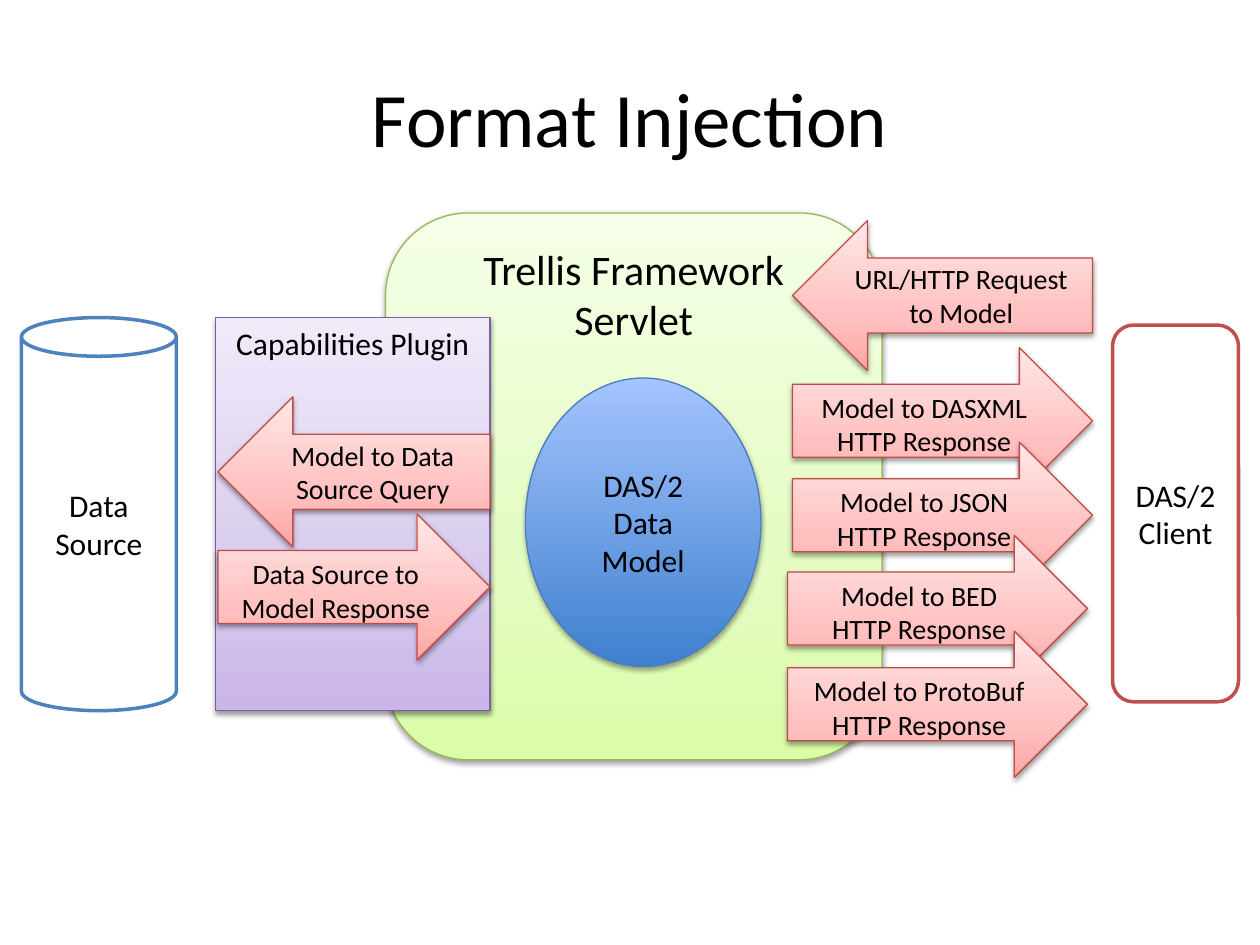
import lxml.etree
import pptx
import pptx.dml.color
import pptx.enum.shapes
import pptx.enum.text
import pptx.oxml.ns
import pptx.util

Inches = pptx.util.Inches
Pt = pptx.util.Pt
qn = pptx.oxml.ns.qn
MSO = pptx.enum.shapes.MSO_SHAPE
ANCHOR = pptx.enum.text.MSO_ANCHOR
CENTER = pptx.enum.text.PP_ALIGN.CENTER

# Gradient stops run from bottom to top: (percent, colour)
GREEN = [(0, "DAFDA7"), (35, "E4FCC2"), (100, "F5FFE7")]
PURPLE = [(0, "C9B5E8"), (35, "D8CBEE"), (100, "F0EAF9")]
BLUE = [(0, "3F80CE"), (100, "A4C4FF")]
RED = [(0, "FFA6A5"), (35, "FFC0BF"), (100, "FFE7E7")]


def rgb(value):
    return pptx.dml.color.RGBColor.from_string(value)


def sub(parent, tag, **attrs):
    return lxml.etree.SubElement(parent, qn(tag), attrs)


class Diagram:
    font = "Calibri"
    ink = "000000"

    def __init__(self, slide):
        self.s = slide

    def add_text(self, sp, lines, size, anchor):
        tf = sp.text_frame
        tf.word_wrap = True
        tf.vertical_anchor = anchor
        for i, line in enumerate(lines):
            p = tf.paragraphs[0] if i == 0 else tf.add_paragraph()
            p.alignment = CENTER
            r = p.add_run()
            r.text = line
            r.font.name = self.font
            r.font.size = Pt(size)
            r.font.color.rgb = rgb(self.ink)

    def title(self, text):
        sp = self.s.shapes.title
        sp.left, sp.top, sp.width, sp.height = map(Inches, (0.5, 0.3, 9, 1.25))
        self.add_text(sp, [text], 44, ANCHOR.MIDDLE)

    def shape(self, kind, box, lines, size, line, width, anchor):
        sp = self.s.shapes.add_shape(kind, *map(Inches, box))
        sp.shadow.inherit = False
        sp.line.color.rgb = rgb(line)
        sp.line.width = Pt(width)
        self.add_text(sp, lines, size, anchor)
        return sp

    def outlined(self, kind, box, text, line):
        sp = self.shape(kind, box, [text], 18, line, 2, ANCHOR.MIDDLE)
        sp.fill.solid()
        sp.fill.fore_color.rgb = rgb("FFFFFF")

    def shaded(self, kind, box, lines, size, stops, line,
               anchor=ANCHOR.TOP, shadow=(1.6, 38)):
        """Add a shape with a vertical gradient and a (distance, opacity) shadow."""
        sp = self.shape(kind, box, lines, size, line, 0.75, anchor)
        sp.fill.gradient()
        sp.fill.gradient_angle = 90
        props = sp.element.spPr
        stop_list = props.find(".//" + qn("a:gsLst"))
        for old in list(stop_list):
            stop_list.remove(old)
        for percent, colour in stops:
            stop = sub(stop_list, "a:gs", pos=str(percent * 1000))
            sub(stop, "a:srgbClr", val=colour)
        distance, opacity = shadow
        outer = sub(props.find(qn("a:effectLst")), "a:outerShdw",
                    blurRad=str(Pt(3.1)), dist=str(Pt(distance)),
                    dir="5400000", rotWithShape="0")
        black = sub(outer, "a:srgbClr", val="000000")
        sub(black, "a:alpha", val=str(opacity * 1000))

    def request(self, box, lines):
        self.shaded(MSO.LEFT_ARROW, box, lines, 16, RED, "BF4C48", ANCHOR.MIDDLE)

    def response(self, box, lines):
        self.shaded(MSO.RIGHT_ARROW, box, lines, 16, RED, "BF4C48")


def main():
    prs = pptx.Presentation()
    prs.slide_width, prs.slide_height = Inches(10), Inches(7.5)
    d = Diagram(prs.slides.add_slide(prs.slide_layouts[5]))
    d.title("Format Injection")

    d.shaded(MSO.FLOWCHART_ALTERNATE_PROCESS, (3.06, 1.69, 3.94, 4.34),
             ["Trellis Framework Servlet"], 24, GREEN, "98B955")
    d.shaded(MSO.RECTANGLE, (1.71, 2.52, 2.18, 3.12),
             ["Capabilities Plugin"], 18, PURPLE, "7D60A0")
    d.shaded(MSO.OVAL, (4.17, 3, 1.87, 2.29), ["DAS/2 Data Model"], 18,
             BLUE, "4B7EBC", ANCHOR.MIDDLE, (1.8, 35))

    d.outlined(MSO.CAN, (0.17, 2.52, 1.23, 3.12), "Data Source", "4F81BD")
    d.outlined(MSO.ROUNDED_RECTANGLE, (8.83, 2.58, 1, 2.99),
               "DAS/2 Client", "C0504D")

    d.request((1.73, 3.15, 2.16, 1.19), ["Model to Data Source Query"])
    d.response((1.73, 4.08, 2.16, 1.16), ["Data Source to Model Response"])

    d.request((6.29, 1.75, 2.38, 1.19), ["URL/HTTP Request", "to Model"])
    formats = [("DASXML", 6.29, 2.76), ("JSON", 6.29, 3.51),
               ("BED", 6.25, 4.25), ("ProtoBuf", 6.25, 5.01)]
    for name, left, top in formats:
        d.response((left, top, 2.38, 1.16),
                   [f"Model to {name}", "HTTP Response"])

    prs.save("out.pptx")


if __name__ == "__main__":
    main()
